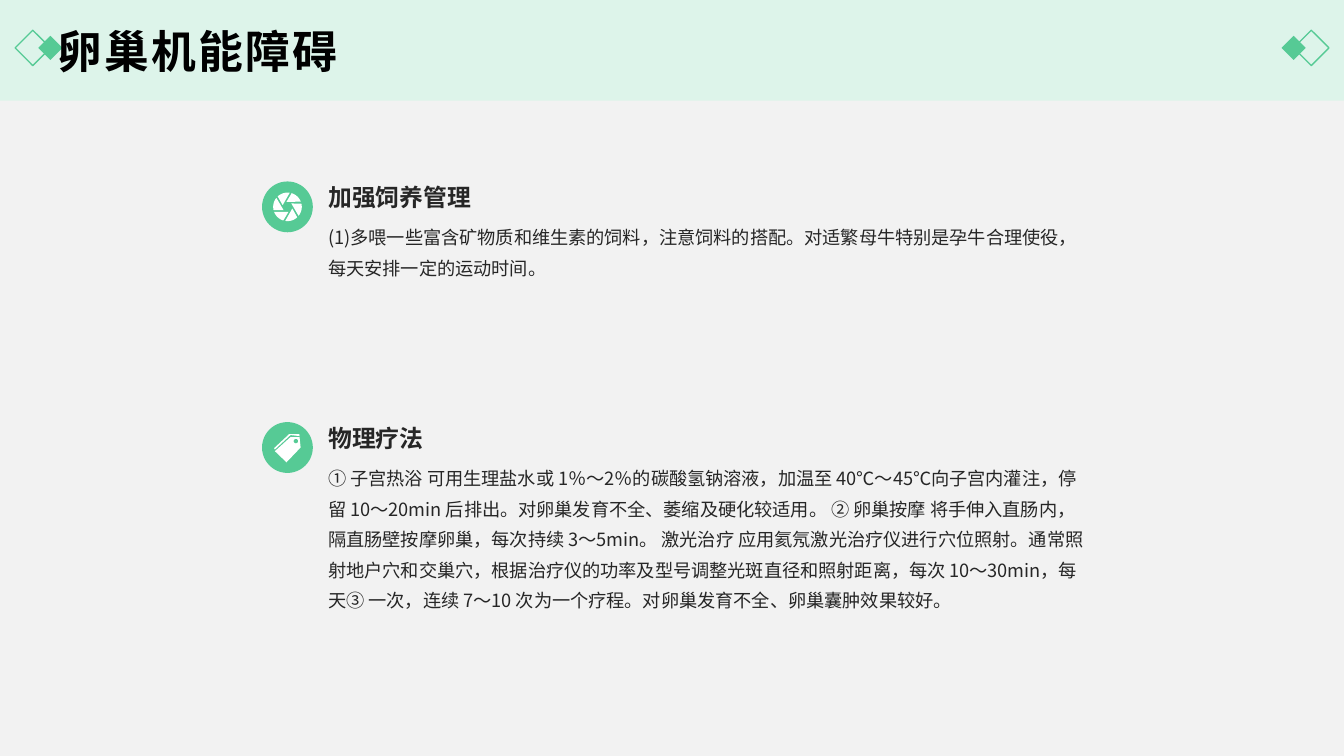
import math
from dataclasses import dataclass

from lxml import etree
from pptx import Presentation, util as u
from pptx.dml.color import RGBColor
from pptx.enum import shapes, text
from pptx.oxml.ns import qn

Point = tuple[float, float]
Outline = list[Point]

GREEN = RGBColor(0x56, 0xCA, 0x95)
MINT = RGBColor(0xDD, 0xF4, 0xEA)
PAPER = RGBColor(0xF2, 0xF2, 0xF2)
WHITE = RGBColor(0xFF, 0xFF, 0xFF)
BLACK = RGBColor(0, 0, 0)
INK = RGBColor(0x26, 0x26, 0x26)
FONT = "Noto Sans CJK SC"

COLUMNS, ROWS = 160, 90
BADGE_LEFT, BADGE_TOP, BADGE_SIZE = 31.2, 21.6, 6.05
SECTION_PITCH = 28.65
TEXT_LEFT, TEXT_WIDTH = 37.9, 92.9
DIAMOND_ROW = 5.7

deck = Presentation()
deck.slide_width, deck.slide_height = u.Inches(13.33), u.Inches(7.5)
slide = deck.slides.add_slide(deck.slide_layouts[6])
slide.background.fill.solid()
slide.background.fill.fore_color.rgb = PAPER


@dataclass(frozen=True)
class Diamond:
    column: float
    size: float
    filled: bool


@dataclass(frozen=True)
class Section:
    heading: str
    body: str
    icon: list[Outline]


def across(columns: float) -> int:
    return round(deck.slide_width * columns / COLUMNS)


def down(rows: float) -> int:
    return round(deck.slide_height * rows / ROWS)


def box(left: float, top: float, width: float, height: float) -> tuple[int, int, int, int]:
    return across(left), down(top), across(width), down(height)


def paint(shape, fill: RGBColor | None = None, line: RGBColor | None = None) -> None:
    shape.shadow.inherit = False
    if fill is None:
        shape.fill.background()
    else:
        shape.fill.solid()
        shape.fill.fore_color.rgb = fill
    if line is None:
        shape.line.fill.background()
    else:
        shape.line.color.rgb = line
        shape.line.width = u.Pt(1)


def write(words: str, area: tuple[int, int, int, int], *, size: float,
          color: RGBColor = INK, bold: bool = False, tracking: float = 0,
          leading: float | None = None, before: float = 0, middle: bool = False,
          insets: tuple[float, float] = (7.2, 3.6)) -> None:
    frame = slide.shapes.add_textbox(*area).text_frame
    frame.word_wrap = True
    frame.margin_left = frame.margin_right = u.Pt(insets[0])
    frame.margin_top = frame.margin_bottom = u.Pt(insets[1])
    frame.vertical_anchor = text.MSO_ANCHOR.MIDDLE if middle else text.MSO_ANCHOR.TOP
    paragraph = frame.paragraphs[0]
    paragraph.line_spacing = leading
    paragraph.space_before = u.Pt(before)
    run = paragraph.add_run()
    run.text = words
    run.font.size, run.font.bold, run.font.name = u.Pt(size), bold, FONT
    run.font.color.rgb = color
    properties = run._r.get_or_add_rPr()
    properties.set("spc", str(round(tracking * 100)))
    etree.SubElement(properties, qn("a:ea")).set("typeface", FONT)


def arc(center: Point, radius: float, start: float, end: float, steps: int) -> Outline:
    angles = [math.radians(start + (end - start) * step / steps) for step in range(steps + 1)]
    return [(center[0] + radius * math.cos(a), center[1] + radius * math.sin(a)) for a in angles]


def shutter_blade(turn: float) -> Outline:
    apex = arc((0, 0), 0.61, 79 + turn, 79 + turn, 1)[0]
    return [apex, *arc((0, 0), 1.7, 107 + turn, 159 + turn, 10)]


def draw_icon(outlines: list[Outline], center: Point) -> None:
    placed = [[(across(center[0] + x), down(center[1] + y)) for x, y in outline]
              for outline in outlines]
    builder = slide.shapes.build_freeform(*placed[0][0], scale=1.0)
    builder.add_line_segments(placed[0][1:], close=True)
    for outline in placed[1:]:
        builder.move_to(*outline[0])
        builder.add_line_segments(outline[1:], close=True)
    paint(builder.convert_to_shape(), WHITE)


def draw_diamond(diamond: Diamond) -> None:
    half = diamond.size / 2
    area = box(diamond.column - half, DIAMOND_ROW - half, diamond.size, diamond.size)
    shape = slide.shapes.add_shape(shapes.MSO_SHAPE.DIAMOND, *area)
    if diamond.filled:
        paint(shape, fill=GREEN)
    else:
        paint(shape, line=GREEN)


def draw_section(section: Section, index: int) -> None:
    top = BADGE_TOP + index * SECTION_PITCH
    badge = slide.shapes.add_shape(shapes.MSO_SHAPE.OVAL,
                                   *box(BADGE_LEFT, top, BADGE_SIZE, BADGE_SIZE))
    paint(badge, GREEN)
    draw_icon(section.icon, (BADGE_LEFT + BADGE_SIZE / 2, top + BADGE_SIZE / 2))
    write(section.body, box(TEXT_LEFT, top + 3.75, TEXT_WIDTH, 22.9),
          size=13, leading=1.4, before=4)
    write(section.heading, box(TEXT_LEFT, top - 0.45, TEXT_WIDTH, 5.8), size=17, bold=True)


SHUTTER = [shutter_blade(turn) for turn in range(0, 360, 60)]
TAG = [
    [(1.44, -1.24), (0.36, -1.24), (-1.5, 0.44), (-0.12, 1.76), (1.56, 0)],
    arc((1, -0.76), 0.27, 360, 0, 16),
    [(-1.5, 0.24), (-1.6, 0.08), (0.2, -1.6), (1.4, -1.6), (1.44, -1.36), (0.36, -1.48)],
]

SECTIONS = [
    Section(
        "加强饲养管理",
        "(1)多喂一些富含矿物质和维生素的饲料，注意饲料的搭配。"
        "对适繁母牛特别是孕牛合理使役，每天安排一定的运动时间。",
        SHUTTER,
    ),
    Section(
        "物理疗法",
        "① 子宫热浴 可用生理盐水或 1％～2％的碳酸氢钠溶液，加温至 40℃～45℃向子宫内灌注，"
        "停留 10～20min 后排出。对卵巢发育不全、萎缩及硬化较适用。 "
        "② 卵巢按摩 将手伸入直肠内，隔直肠壁按摩卵巢，每次持续 3～5min。 "
        "激光治疗 应用氦氖激光治疗仪进行穴位照射。通常照射地户穴和交巢穴，"
        "根据治疗仪的功率及型号调整光斑直径和照射距离，每次 10～30min，"
        "每天③ 一次，连续 7～10 次为一个疗程。对卵巢发育不全、卵巢囊肿效果较好。",
        TAG,
    ),
]

header = slide.shapes.add_shape(shapes.MSO_SHAPE.RECTANGLE, *box(0, 0, COLUMNS, 12))
paint(header, MINT)
for inset, size, filled in ((6, 2.88, True), (3.9, 4.2, False)):
    for column in (inset, COLUMNS - inset):
        draw_diamond(Diamond(column, size, filled))
write("卵巢机能障碍", box(6, 2, 148, 8), size=32, color=BLACK, bold=True,
      tracking=1.6, middle=True, insets=(5, 2.5))
for index, section in enumerate(SECTIONS):
    draw_section(section, index)

deck.save("out.pptx")
